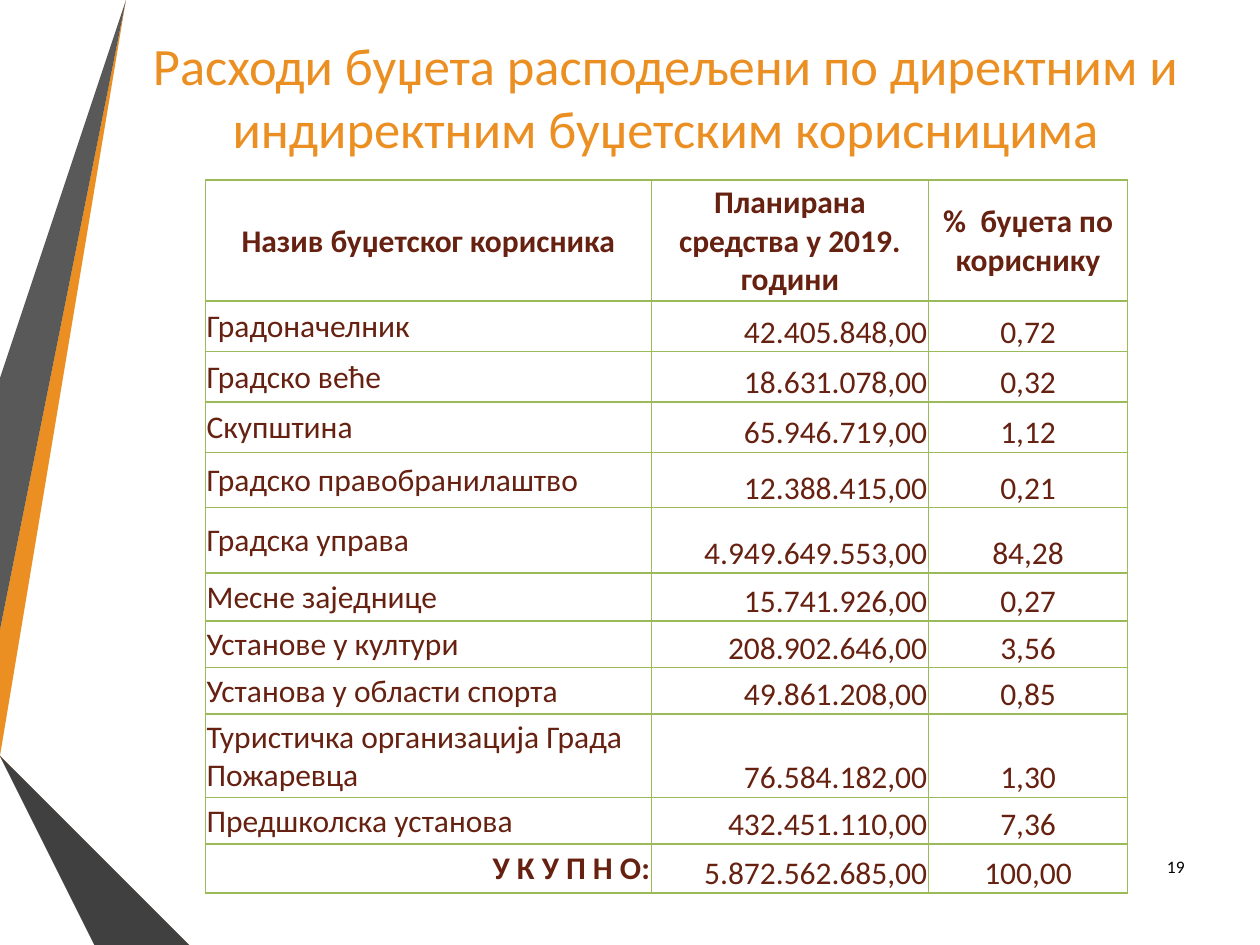
from typing import NamedTuple

from lxml import etree
from pptx import Presentation
from pptx import util as u
from pptx.dml.color import RGBColor
from pptx.enum import text
from pptx.oxml.ns import qn

WIDTH, HEIGHT = 10, 7.5
FONT = "Calibri"
ORANGE, BROWN, GREEN, BLACK = "EB8F22", "662111", "9BBB59", "000000"
LEFT, CENTER, RIGHT = text.PP_ALIGN.LEFT, text.PP_ALIGN.CENTER, text.PP_ALIGN.RIGHT
MIDDLE, BOTTOM = text.MSO_ANCHOR.MIDDLE, text.MSO_ANCHOR.BOTTOM


class Ribbon(NamedTuple):
    color: str
    points: list[tuple[float, float]]


class Row(NamedTuple):
    height: float
    name: str
    amount: str
    share: str


RIBBONS = [
    Ribbon(ORANGE, [(0, 5.44), (0, 5.75), (0.22, 5.79), (1.17, 0), (0.89, 0)]),
    Ribbon("595959", [(0.83, 0), (0.55, 0), (0, 3.36), (0, 5.06)]),
    Ribbon("262626", [(0, 6.19), (0, 6.21), (0.93, HEIGHT), (0.99, HEIGHT)]),
    Ribbon("7B480B", [(0, 5.79), (0, 5.8), (1.56, HEIGHT), (1.63, HEIGHT)]),
    Ribbon("B96C11", [(0, 5.79), (1.63, HEIGHT), (2.33, HEIGHT), (0.22, 5.79), (0, 5.75)]),
    Ribbon("404040", [(0, 6.19), (0.99, HEIGHT), (1.51, HEIGHT), (0, 5.86)]),
]

COLUMNS = [3.54, 2.2, 1.58]
ROWS = [
    Row(0.96, "Назив буџетског корисника", "Планирана средства у 2019. години",
        "%  буџета по кориснику"),
    Row(0.4, "Градоначелник", "42.405.848,00", "0,72"),
    Row(0.4, "Градско веће", "18.631.078,00", "0,32"),
    Row(0.4, "Скупштина", "65.946.719,00", "1,12"),
    Row(0.44, "Градско правобранилаштво", "12.388.415,00", "0,21"),
    Row(0.52, "Градска управа", "4.949.649.553,00", "84,28"),
    Row(0.38, "Месне заједнице", "15.741.926,00", "0,27"),
    Row(0.37, "Установе у култури", "208.902.646,00", "3,56"),
    Row(0.37, "Установа у области спорта", "49.861.208,00", "0,85"),
    Row(0.66, "Туристичка организација Града Пожаревца", "76.584.182,00", "1,30"),
    Row(0.37, "Предшколска установа", "432.451.110,00", "7,36"),
    Row(0.39, "У К У П Н О:", "5.872.562.685,00", "100,00"),
]


def rgb(color: str) -> RGBColor:
    return RGBColor.from_string(color)


def write(frame, words: str, *, size: float, color: str, align, bold: bool = False) -> None:
    para = frame.paragraphs[0]
    para.alignment = align
    span = para.add_run()
    span.text = words
    span.font.name = FONT
    span.font.size = u.Pt(size)
    span.font.bold = bold
    span.font.color.rgb = rgb(color)


def add_text(page, words: str, left: float, top: float, width: float, height: float,
             **style) -> None:
    box = page.shapes.add_textbox(*map(u.Inches, (left, top, width, height)))
    box.text_frame.word_wrap = True
    box.text_frame.vertical_anchor = MIDDLE
    write(box.text_frame, words, **style)


def draw_ribbon(page, ribbon: Ribbon) -> None:
    builder = page.shapes.build_freeform(*ribbon.points[0], scale=u.Inches(1))
    builder.add_line_segments(ribbon.points[1:], close=True)
    shape = builder.convert_to_shape()
    shape.shadow.inherit = False
    shape.fill.solid()
    shape.fill.fore_color.rgb = rgb(ribbon.color)
    shape.line.fill.background()


def set_borders(cell, color: str, points: float) -> None:
    properties = cell._tc.get_or_add_tcPr()
    for index, side in enumerate(("lnL", "lnR", "lnT", "lnB")):
        line = etree.Element(qn(f"a:{side}"), w=str(u.Pt(points)))
        fill = etree.SubElement(line, qn("a:solidFill"))
        etree.SubElement(fill, qn("a:srgbClr"), val=color)
        properties.insert(index, line)


def draw_table(page, left: float, top: float) -> None:
    size = sum(COLUMNS), sum(row.height for row in ROWS)
    table = page.shapes.add_table(
        len(ROWS), len(COLUMNS), *map(u.Inches, (left, top, *size))).table
    table.first_row = table.horz_banding = False
    for column, width in zip(table.columns, COLUMNS):
        column.width = u.Inches(width)
    last = len(ROWS) - 1
    for number, row in enumerate(ROWS):
        table.rows[number].height = u.Inches(row.height)
        header = number == 0
        aligns = [CENTER] * 3 if header else [RIGHT if number == last else LEFT, RIGHT, CENTER]
        for column, (words, align) in enumerate(zip(row[1:], aligns)):
            cell = table.cell(number, column)
            cell.margin_left = cell.margin_right = cell.margin_top = u.Inches(0.01)
            cell.margin_bottom = 0
            cell.vertical_anchor = MIDDLE if header or column == 0 else BOTTOM
            cell.fill.background()
            set_borders(cell, GREEN, 1)
            write(cell.text_frame, words, size=18, color=BROWN, align=align,
                  bold=header or (number == last and column == 0))


def main() -> None:
    deck = Presentation()
    deck.slide_width, deck.slide_height = u.Inches(WIDTH), u.Inches(HEIGHT)
    page = deck.slides.add_slide(deck.slide_layouts[6])
    for ribbon in RIBBONS:
        draw_ribbon(page, ribbon)
    add_text(page, "Расходи буџета расподељени по директним и индиректним буџетским корисницима",
             1.07, 0.02, 8.43, 1.49, size=30, color=ORANGE, align=CENTER)
    add_text(page, "19", 9.03, 6.68, 0.47, 0.4, size=10, color=BLACK, align=RIGHT)
    draw_table(page, 1.63, 1.43)
    deck.save("out.pptx")


if __name__ == "__main__":
    main()
